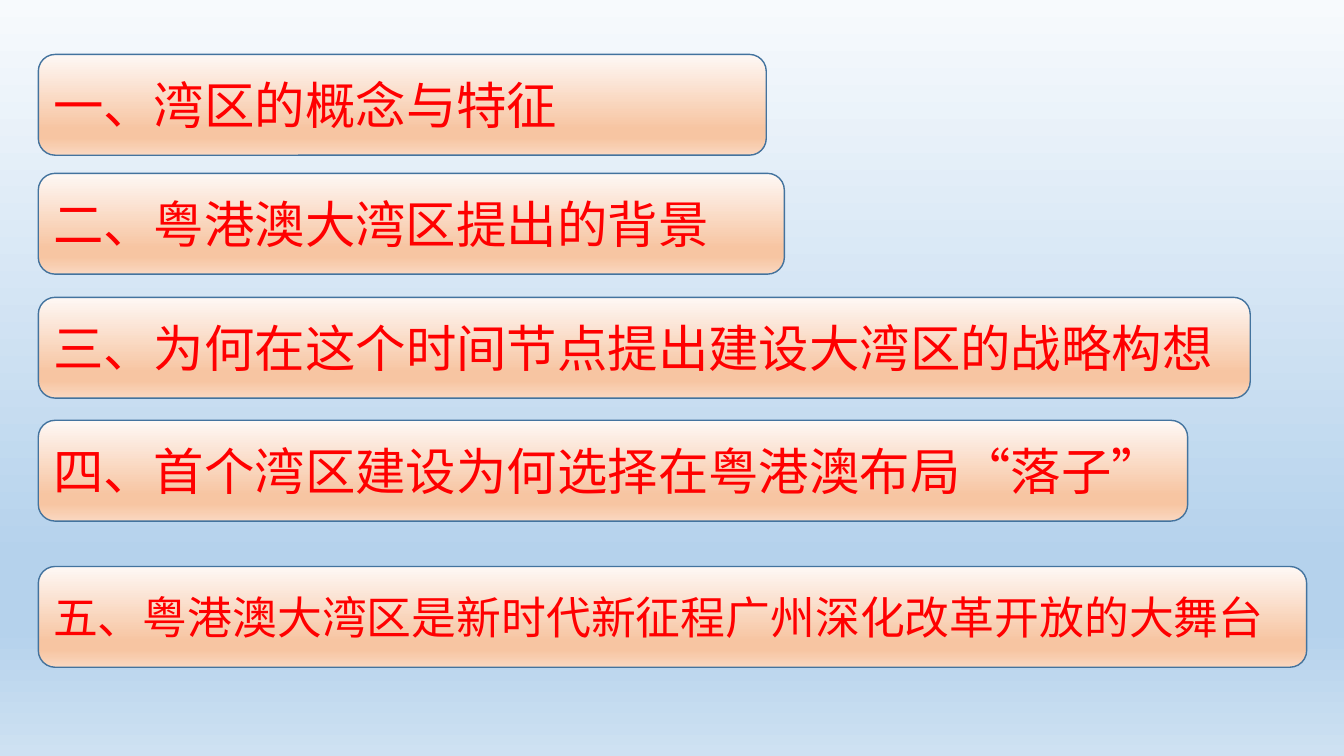
from copy import deepcopy

from pptx import Presentation
from pptx import util as u
from pptx.dml.color import RGBColor
from pptx.enum import shapes, text
from pptx.oxml import ns

RED = RGBColor(0xFF, 0x00, 0x00)
BORDER = RGBColor(0x43, 0x73, 0x9E)
SKY = [RGBColor.from_string(c) for c in ("F7FAFD", "B5D2EC", "B5D2EC", "CEE1F2")]
PEACH = [RGBColor.from_string(c) for c in ("FEF8F5", "F7C5A2", "F7C5A2", "FAD8C1")]
STOPS = (0, 0.74, 0.83, 1)


class Agenda:
    font = "Calibri"
    left = 0.38
    height = 1

    def __init__(self, prs):
        self.s = prs.slides.add_slide(prs.slide_layouts[6])

    def gradient(self, fill, element, colors):
        fill.gradient()
        fill.gradient_angle = 270
        stops = element.find(".//" + ns.qn("a:gsLst"))
        while len(stops) < len(colors):
            stops.append(deepcopy(stops[0]))
        for stop, position, color in zip(fill.gradient_stops, STOPS, colors):
            stop.position = position
            stop.color.rgb = color

    def background(self):
        self.gradient(self.s.background.fill, self.s.element, SKY)

    def topic(self, title, top, width, size):
        sp = self.s.shapes.add_shape(
            shapes.MSO_SHAPE.ROUNDED_RECTANGLE,
            u.Inches(self.left), u.Inches(top), u.Inches(width), u.Inches(self.height))
        sp.shadow.inherit = False
        self.gradient(sp.fill, sp.element, PEACH)
        sp.line.color.rgb = BORDER
        sp.line.width = u.Pt(1)
        tf = sp.text_frame
        tf.text = title
        tf.word_wrap = True
        tf.vertical_anchor = text.MSO_ANCHOR.MIDDLE
        p = tf.paragraphs[0]
        p.alignment = text.PP_ALIGN.LEFT
        r = p.runs[0]
        r.font.name = self.font
        r.font.size = u.Pt(size)
        r.font.color.rgb = RED


def main():
    prs = Presentation()
    prs.slide_width = u.Inches(13.33)
    prs.slide_height = u.Inches(7.5)
    agenda = Agenda(prs)
    agenda.background()
    topics = [
        ("一、湾区的概念与特征", 0.54, 7.22, 36),
        ("二、粤港澳大湾区提出的背景", 1.72, 7.4, 36),
        ("三、为何在这个时间节点提出建设大湾区的战略构想", 2.95, 12.02, 36),
        ("四、首个湾区建设为何选择在粤港澳布局“落子”", 4.17, 11.4, 36),
        ("五、粤港澳大湾区是新时代新征程广州深化改革开放的大舞台", 5.62, 12.58, 32),
    ]
    for title, top, width, size in topics:
        agenda.topic(title, top, width, size)
    prs.save("out.pptx")


if __name__ == "__main__":
    main()
